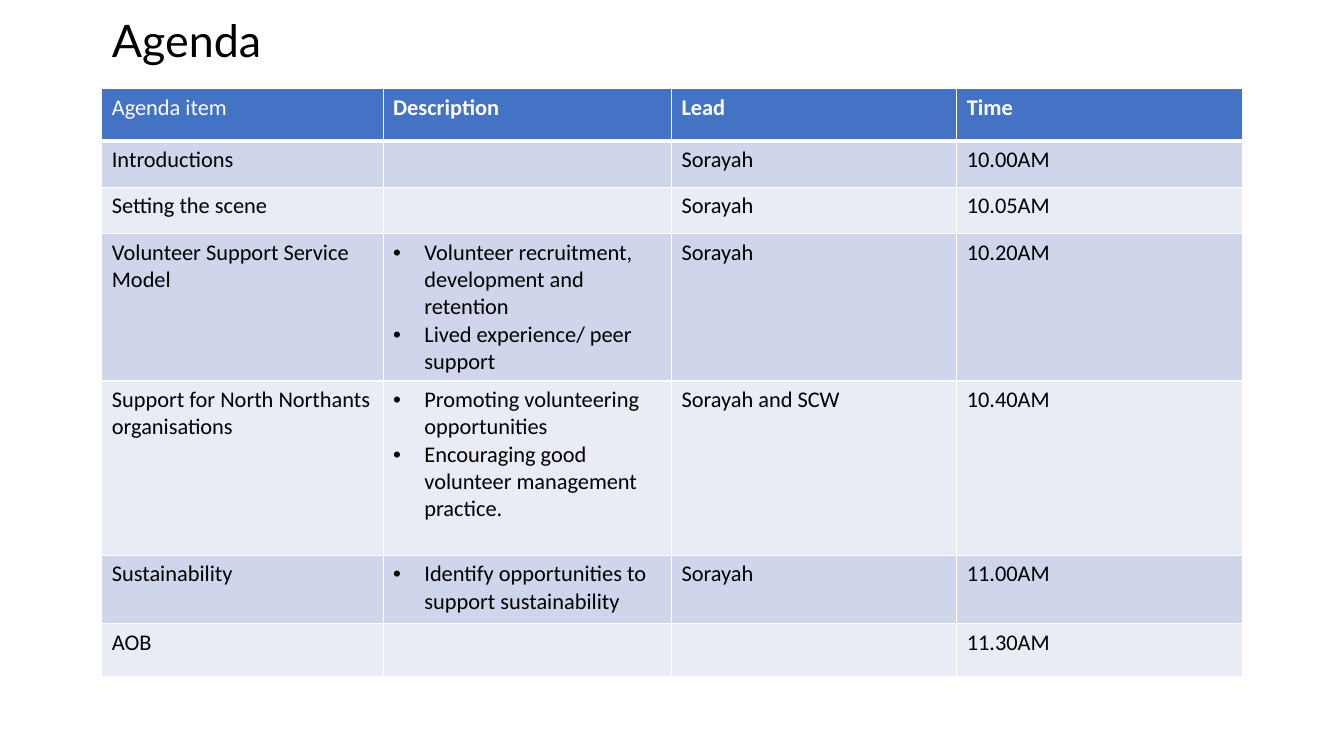
from lxml.etree import SubElement
from pptx import Presentation
from pptx.dml.color import RGBColor
from pptx.enum.text import MSO_ANCHOR as Anchor, PP_ALIGN as Align
from pptx.oxml.ns import qn
from pptx.util import Inches, Pt

COLORS = {
    "header": "4472C4",
    "odd": "CFD5EA",
    "even": "E9EBF5",
    "white": "FFFFFF",
    "black": "000000",
}
COL_WIDTHS = [2.79, 2.86, 2.83, 2.83]
ROW_HEIGHTS = [0.52, 0.46, 0.46, 1.46, 1.73, 0.68, 0.52]
AGENDA = [
    ("Agenda item", "Description", "Lead", "Time"),
    ("Introductions", [], "Sorayah", "10.00AM"),
    ("Setting the scene", [], "Sorayah", "10.05AM"),
    ("Volunteer Support Service Model",
     ["Volunteer recruitment, development and retention",
      "Lived experience/ peer support"],
     "Sorayah", "10.20AM"),
    ("Support for North Northants organisations",
     ["Promoting volunteering opportunities",
      "Encouraging good volunteer management practice."],
     "Sorayah and SCW", "10.40AM"),
    ("Sustainability", ["Identify opportunities to support sustainability"],
     "Sorayah", "11.00AM"),
    ("AOB", [], "", "11.30AM"),
]


def rgb(name):
    return RGBColor.from_string(COLORS[name])


def format_font(font, color, **values):
    for name, value in values.items():
        setattr(font, name, value)
    font.color.rgb = rgb(color)


def add_title(slide, text):
    sp = slide.shapes.title
    box = {"left": 1.01, "top": 0.15, "width": 11.5, "height": 0.58}
    for name, value in box.items():
        setattr(sp, name, Inches(value))
    tf = sp.text_frame
    tf.vertical_anchor = Anchor.MIDDLE
    p = tf.paragraphs[0]
    p.alignment = Align.LEFT
    p.line_spacing = 0.8
    r = p.add_run()
    r.text = text
    format_font(r.font, "black", name="Lato", size=Pt(32), bold=False)


def add_bullet(p):
    pPr = p._p.get_or_add_pPr()
    pPr.set("marL", str(Inches(0.31)))
    pPr.set("indent", str(Inches(-0.31)))
    SubElement(pPr, qn("a:buFont"), typeface="Arial")
    SubElement(pPr, qn("a:buChar"), char="•")


def set_borders(cell, top, bottom):
    tcPr = cell._tc.get_or_add_tcPr()
    for side, width in {"L": 1, "R": 1, "T": top, "B": bottom}.items():
        ln = SubElement(tcPr, qn(f"a:ln{side}"), w=str(Pt(width)))
        fill = SubElement(ln, qn("a:solidFill"))
        SubElement(fill, qn("a:srgbClr"), val=COLORS["white"])


def fill_cell(cell, content, row, col):
    set_borders(cell, 3 if row == 1 else 1, 3 if row == 0 else 1)
    cell.fill.solid()
    band = "header" if row == 0 else "odd" if row % 2 else "even"
    cell.fill.fore_color.rgb = rgb(band)
    bulleted = isinstance(content, list)
    tf = cell.text_frame
    for i, text in enumerate(content if bulleted else [content]):
        p = tf.add_paragraph() if i else tf.paragraphs[0]
        if bulleted:
            add_bullet(p)
        if text:
            r = p.add_run()
            r.text = text
            format_font(r.font, "black" if row else "white", name="Calibri",
                        size=Pt(16), bold=row == 0 and col > 0)


def add_agenda(slide):
    table = slide.shapes.add_table(
        len(ROW_HEIGHTS), len(COL_WIDTHS), Inches(1.01), Inches(0.88),
        Inches(sum(COL_WIDTHS)), Inches(sum(ROW_HEIGHTS))).table
    for column, width in zip(table.columns, COL_WIDTHS):
        column.width = Inches(width)
    for row, height in zip(table.rows, ROW_HEIGHTS):
        row.height = Inches(height)
    for i, items in enumerate(AGENDA):
        for j, content in enumerate(items):
            fill_cell(table.cell(i, j), content, i, j)


def main():
    prs = Presentation()
    prs.slide_width, prs.slide_height = Inches(13.33), Inches(7.5)
    slide = prs.slides.add_slide(prs.slide_layouts[5])
    add_agenda(slide)
    add_title(slide, "Agenda")
    prs.save("out.pptx")


if __name__ == "__main__":
    main()
